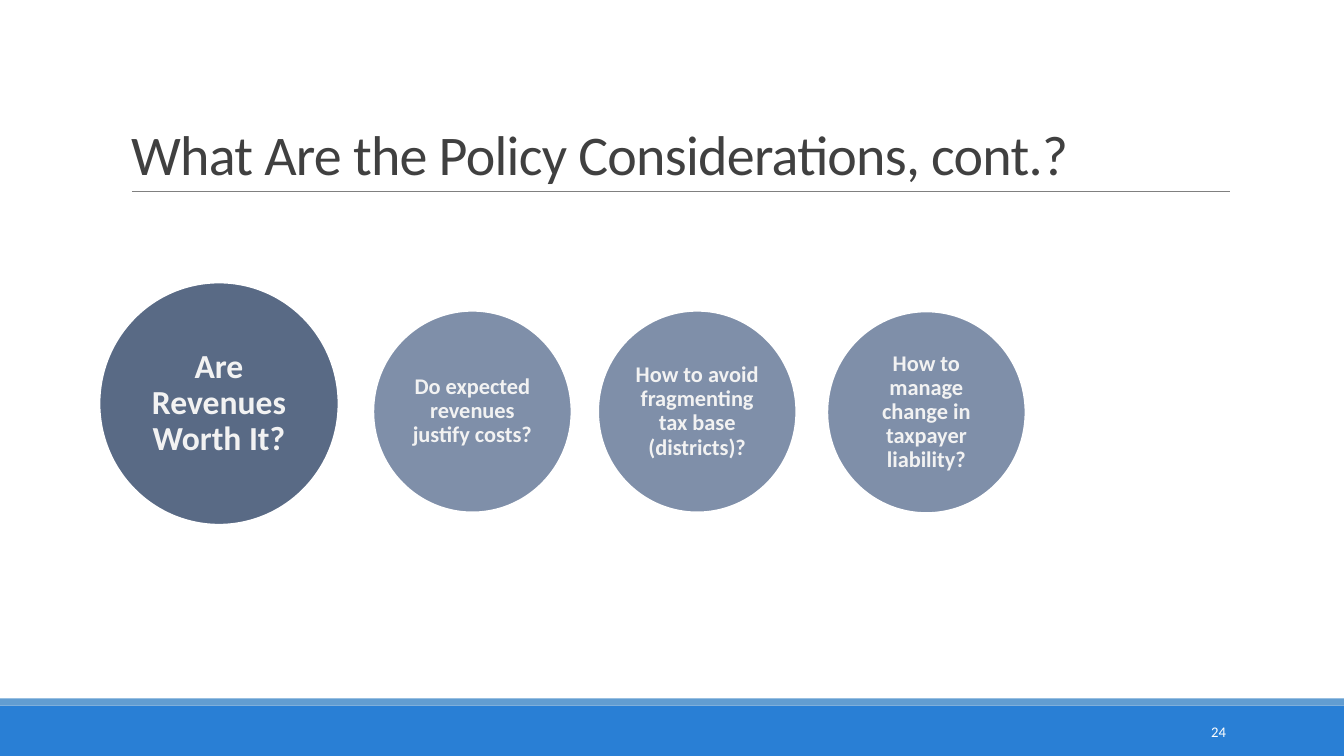
from pptx import Presentation
from pptx.dml.color import RGBColor
from pptx.enum.shapes import MSO_CONNECTOR as Link, MSO_SHAPE as Form
from pptx.enum.text import MSO_ANCHOR as Anchor, MSO_AUTO_SIZE as Fit, PP_ALIGN as Align
from pptx.oxml.ns import qn
from pptx.util import Pt
from lxml.etree import SubElement

BLUE = RGBColor(0x29, 0x7F, 0xD5)
SKY = RGBColor(0x62, 0x9D, 0xD1)
SLATE = RGBColor(0x59, 0x6A, 0x85)
STEEL = RGBColor(0x7F, 0x8F, 0xA9)
GRAY = RGBColor(0x80, 0x80, 0x80)
DARK = RGBColor(0x40, 0x40, 0x40)
PALE = RGBColor(0xF2, 0xF2, 0xF2)
WHITE = RGBColor(0xFF, 0xFF, 0xFF)


def add_form(form, left, top, width, height, fill):
    shape = slide.shapes.add_shape(form, Pt(left), Pt(top), Pt(width), Pt(height))
    shape.shadow.inherit = False
    shape.fill.solid()
    shape.fill.fore_color.rgb = fill
    shape.line.fill.background()
    return shape


def write(frame, text, size, color, align, anchor):
    frame.word_wrap = True
    frame.auto_size = Fit.NONE
    frame.vertical_anchor = anchor
    frame.text = text
    para = frame.paragraphs[0]
    para.alignment = align
    para.font.name = "Calibri"
    para.font.size = Pt(size)
    para.font.color.rgb = color
    return para


deck = Presentation()
deck.slide_width, deck.slide_height = Pt(960), Pt(540)
slide = deck.slides.add_slide(deck.slide_layouts[5])

# Footer bars and title rule
add_form(Form.RECTANGLE, 0, 504, 960, 36, BLUE)
add_form(Form.RECTANGLE, 0, 498.8, 960, 5.2, SKY)
rule = slide.shapes.add_connector(Link.STRAIGHT, Pt(94.3), Pt(136.8), Pt(878.8), Pt(136.8))
rule.line.color.rgb = GRAY
rule.line.width = Pt(0.5)
SubElement(rule._element.spPr, qn("a:effectLst"))

# Title and slide number
title = slide.shapes.title
title.left, title.top, title.width, title.height = Pt(86.4), Pt(22.6), Pt(792), Pt(114.2)
para = write(title.text_frame, "What Are the Policy Considerations, cont.?",
             40, DARK, Align.LEFT, Anchor.BOTTOM)
para.line_spacing = 0.85
para.runs[0].font._element.set("spc", "-50")

number = slide.shapes.add_textbox(Pt(779.8), Pt(508.5), Pt(103), Pt(28.8))
write(number.text_frame, "24", 10.5, WHITE, Align.RIGHT, Anchor.MIDDLE)

# Question circles: left, top, width, height, fill, text size, text
circles = [
    (266.7, 222, 141.5, 144, STEEL, 16, "Do expected revenues justify costs?"),
    (427.3, 222, 141.5, 144, STEEL, 16, "How to avoid fragmenting tax base (districts)?"),
    (591, 222.5, 141.5, 144, STEEL, 16, "How to manage change in taxpayer liability?"),
    (71.1, 201.8, 170.7, 173, SLATE, 24, "Are Revenues Worth It?"),
]
for left, top, width, height, fill, size, text in circles:
    oval = add_form(Form.OVAL, left, top, width, height, fill)
    oval.line.color.rgb = WHITE
    oval.line.width = Pt(1.25)
    frame = oval.text_frame
    frame.margin_left = frame.margin_right = Pt(1)
    frame.margin_top = frame.margin_bottom = 0
    para = write(frame, text, size, PALE, Align.CENTER, Anchor.MIDDLE)
    para.font.bold = True
    para.line_spacing = 0.9

deck.save("out.pptx")
